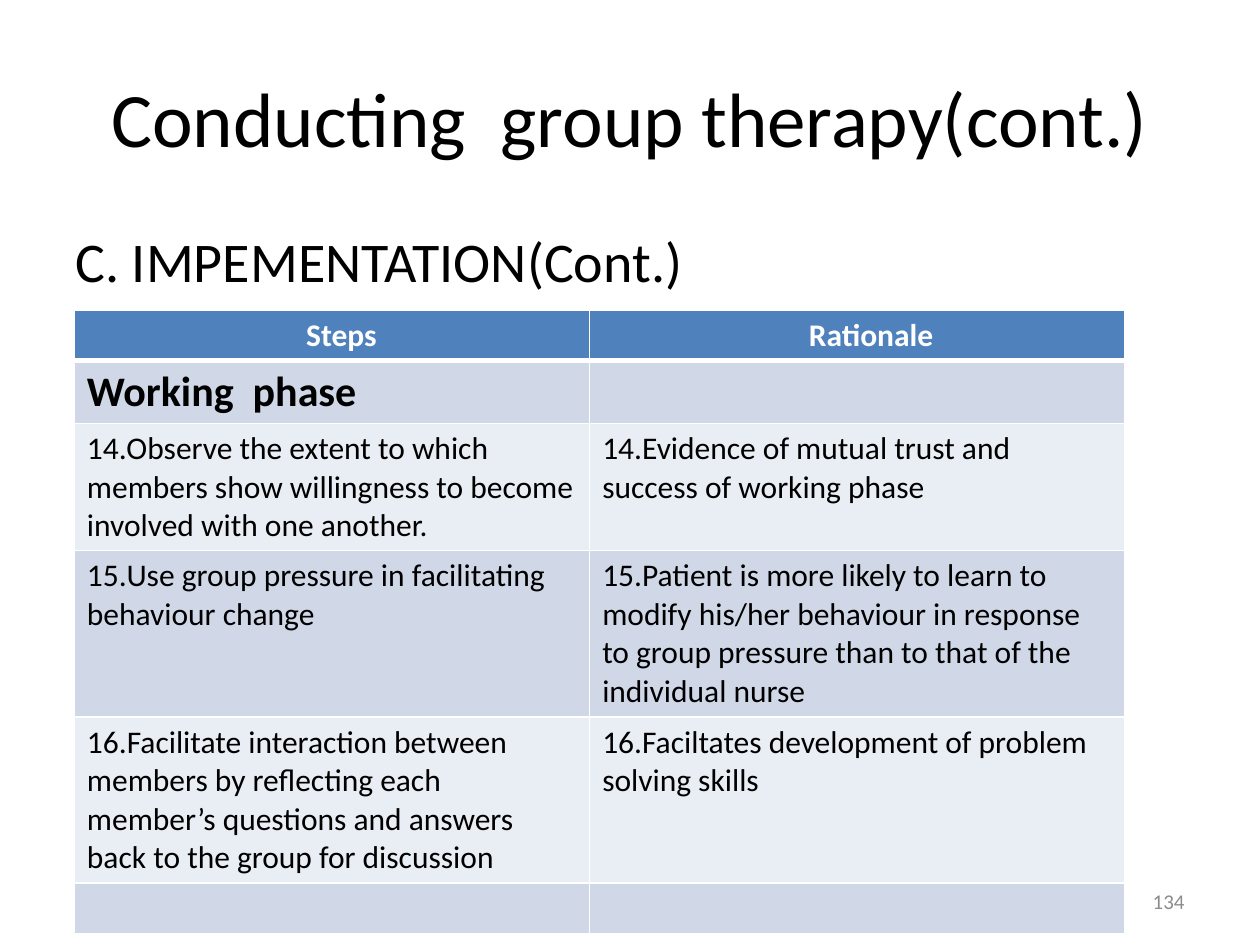
from lxml.etree import SubElement
from pptx import Presentation
from pptx.dml.color import RGBColor
from pptx.enum.text import MSO_ANCHOR as ANCHOR, PP_ALIGN as ALIGN
from pptx.oxml.ns import qn
from pptx.util import Inches, Pt

BLACK = RGBColor(0x00, 0x00, 0x00)
WHITE = RGBColor(0xFF, 0xFF, 0xFF)
GREY = RGBColor(0x8C, 0x8C, 0x8C)
HEADER = RGBColor(0x4F, 0x81, 0xBD)
BANDS = (RGBColor(0xE9, 0xED, 0xF4), RGBColor(0xD0, 0xD8, 0xE8))

COLUMNS = (4.09, 4.25)
HEIGHTS = (0.4, 0.5, 1.01, 1.32, 1.32, 0.4)
HEADER_MARGINS = (1.84, 1.74)
ROWS = (
    ("Steps", "Rationale"),
    ("Working  phase", ""),
    ("14.Observe the extent to which members show willingness to become "
     "involved with one another.",
     "14.Evidence of mutual trust and success of working phase"),
    ("15.Use group pressure in facilitating behaviour change",
     "15.Patient is more likely to learn to modify his/her behaviour in "
     "response to group pressure than to that of the individual nurse"),
    ("16.Facilitate interaction between members by reflecting each member’s "
     "questions and answers back to the group for discussion",
     "16.Faciltates development of problem solving skills"),
    ("", ""),
)


class SlideBuilder:
    """Adds styled text and tables to one slide."""

    def __init__(self, slide, font="Calibri"):
        self.slide = slide
        self.font = font

    def run(self, p, text, size, color=BLACK, bold=False):
        r = p.add_run()
        r.text = text
        r.font.name = self.font
        r.font.size = Pt(size)
        r.font.bold = bold
        r.font.color.rgb = color

    def text(self, box, text, size, color=BLACK, align=ALIGN.LEFT, anchor=ANCHOR.MIDDLE):
        sp = self.slide.shapes.add_textbox(*map(Inches, box))
        tf = sp.text_frame
        tf.word_wrap = True
        tf.vertical_anchor = anchor
        p = tf.paragraphs[0]
        p.alignment = align
        self.run(p, text, size, color)

    def borders(self, cell, bottom):
        tc_pr = cell._tc.get_or_add_tcPr()
        for side, width in (("L", 1), ("R", 1), ("T", 1), ("B", bottom)):
            ln = SubElement(tc_pr, qn(f"a:ln{side}"), w=str(Pt(width)))
            fill = SubElement(ln, qn("a:solidFill"))
            SubElement(fill, qn("a:srgbClr"), val=str(WHITE))

    def cell(self, cell, text, row, col):
        header = row == 0
        self.borders(cell, 3 if header else 1)
        cell.fill.solid()
        cell.fill.fore_color.rgb = HEADER if header else BANDS[row % 2]
        if header:
            cell.margin_left = Inches(HEADER_MARGINS[col])
        if text:
            self.run(cell.text_frame.paragraphs[0], text, 24 if row == 1 else 18,
                     WHITE if header else BLACK, row < 2)

    def table(self, left, top, rows, widths, heights):
        box = (left, top, sum(widths), sum(heights))
        table = self.slide.shapes.add_table(len(rows), len(widths), *map(Inches, box)).table
        table.first_row = table.horz_banding = False
        for column, width in zip(table.columns, widths):
            column.width = Inches(width)
        for i, (texts, height) in enumerate(zip(rows, heights)):
            table.rows[i].height = Inches(height)
            for j, text in enumerate(texts):
                self.cell(table.cell(i, j), text, i, j)


def main():
    prs = Presentation()
    prs.slide_width, prs.slide_height = Inches(10), Inches(7.5)
    builder = SlideBuilder(prs.slides.add_slide(prs.slide_layouts[6]))
    builder.text((0.5, 0.3, 9, 1.25), "Conducting  group therapy(cont.)", 44, align=ALIGN.CENTER)
    builder.text((0.5, 1.75, 9, 4.95), "C. IMPEMENTATION(Cont.)", 32, anchor=ANCHOR.TOP)
    builder.text((7.17, 6.95, 2.33, 0.4), "134", 12, GREY, ALIGN.RIGHT)
    builder.table(0.59, 2.46, ROWS, COLUMNS, HEIGHTS)
    prs.save("out.pptx")


if __name__ == "__main__":
    main()
